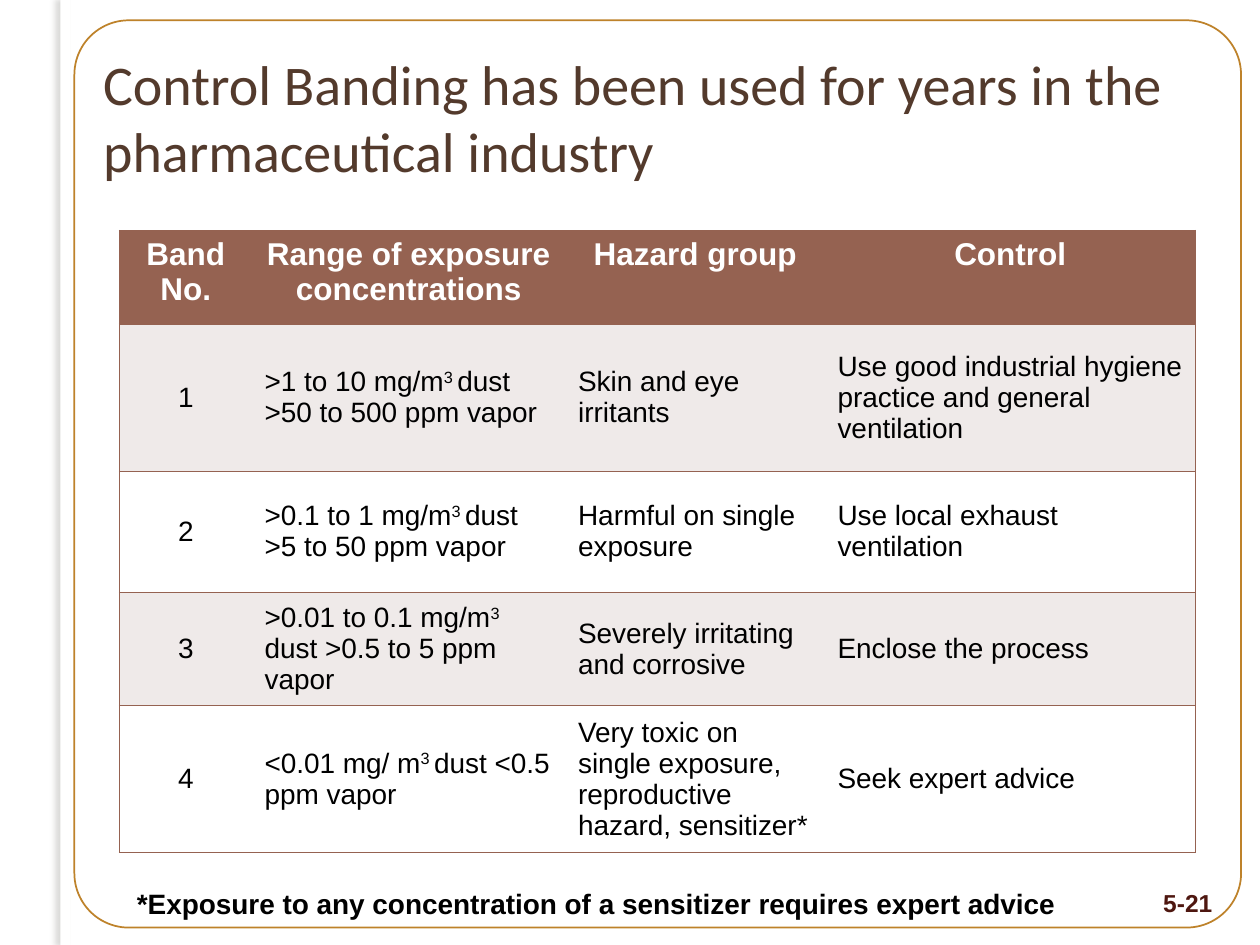
import pptx
import pptx.util
import pptx.dml.color
import pptx.enum.shapes
import pptx.enum.text
import pptx.oxml
from pptx.oxml.ns import nsdecls

Cm = pptx.util.Cm
Pt = pptx.util.Pt
ALIGN = pptx.enum.text.PP_ALIGN
ANCHOR = pptx.enum.text.MSO_ANCHOR
SHAPE = pptx.enum.shapes.MSO_SHAPE

TITLE = "Control Banding has been used for years in the pharmaceutical industry"
FOOTNOTE = "*Exposure to any concentration of a sensitizer requires expert advice"
PAGE = "5-21"
HEADER = ["Band No.", "Range of exposure concentrations", "Hazard group", "Control"]
BANDS = [
    ("1", (">1 to 10 mg/m", "dust >50 to 500 ppm vapor"), "Skin and eye irritants",
     "Use good industrial hygiene practice and general ventilation"),
    ("2", (">0.1 to 1 mg/m", "dust >5 to 50 ppm vapor"), "Harmful on single exposure",
     "Use local exhaust ventilation"),
    ("3", (">0.01 to 0.1 mg/m", "dust >0.5 to 5 ppm vapor"),
     "Severely irritating and corrosive", "Enclose the process"),
    ("4", ("<0.01 mg/ m", "dust <0.5 ppm vapor"),
     "Very toxic on single exposure, reproductive hazard, sensitizer*",
     "Seek expert advice"),
]
COL_WIDTHS = [2.67, 6.32, 5.23, 7.47]
ROW_HEIGHTS = [1.88, 2.97, 2.44, 2.24, 2.87]
BROWN = "956251"
STRIPES = ["FFFFFF", "EFEAE9"]


def rgb(value):
    return pptx.dml.color.RGBColor.from_string(value)


def write(tf, text, size=16, font="Arial", color="000000", bold=False,
          align=ALIGN.LEFT, anchor=ANCHOR.TOP):
    tf.word_wrap = True
    tf.vertical_anchor = anchor
    p = tf.paragraphs[0]
    p.alignment = align
    parts = [(text, 0)]
    if isinstance(text, tuple):
        parts = [(text[0], 0), ("3 ", 30000), (text[1], 0)]
    for part, baseline in parts:
        r = p.add_run()
        r.text = part
        r.font.size = Pt(size)
        r.font.name = font
        r.font.bold = bold
        r.font.color.rgb = rgb(color)
        if baseline:
            r.font._element.set("baseline", str(baseline))


def add_text(s, box, text, **style):
    sp = s.shapes.add_textbox(*[Cm(v) for v in box])
    write(sp.text_frame, text, **style)


def add_panel(s, kind, box):
    sp = s.shapes.add_shape(kind, *[Cm(v) for v in box])
    sp.shadow.inherit = False
    return sp


def add_borders(cell, sides):
    tcPr = cell._tc.get_or_add_tcPr()
    for side in "LRTB":
        paint = "<a:noFill/>"
        if side in sides:
            paint = f'<a:solidFill><a:srgbClr val="{BROWN}"/></a:solidFill>'
        tcPr.append(pptx.oxml.parse_xml(
            f'<a:ln{side} {nsdecls("a")} w="12700">{paint}</a:ln{side}>'))


def add_bands_table(s):
    rows = [HEADER] + BANDS
    frame = s.shapes.add_table(len(rows), len(HEADER), Cm(2.41), Cm(4.65),
                               Cm(sum(COL_WIDTHS)), Cm(sum(ROW_HEIGHTS)))
    table = frame.table
    table.horz_banding = False
    for column, width in zip(table.columns, COL_WIDTHS):
        column.width = Cm(width)
    for i, row in enumerate(rows):
        table.rows[i].height = Cm(ROW_HEIGHTS[i])
        for j, text in enumerate(row):
            cell = table.cell(i, j)
            add_borders(cell, "TB" + {0: "L", len(row) - 1: "R"}.get(j, ""))
            cell.fill.solid()
            cell.fill.fore_color.rgb = rgb(STRIPES[i % 2] if i else BROWN)
            if i == 0:
                write(cell.text_frame, text, size=18, color="FFFFFF", bold=True,
                      align=ALIGN.CENTER)
            else:
                write(cell.text_frame, text,
                      align=ALIGN.LEFT if j else ALIGN.CENTER)
            cell.vertical_anchor = ANCHOR.MIDDLE if i else ANCHOR.TOP


def main():
    prs = pptx.Presentation()
    prs.slide_width, prs.slide_height = Cm(25.4), Cm(19.05)
    s = prs.slides.add_slide(prs.slide_layouts[6])

    strip = add_panel(s, SHAPE.RECTANGLE, (1.22, 0, 0.2, 19.05))
    strip.fill.solid()
    strip.fill.fore_color.rgb = rgb("FFFFFF")
    strip.line.fill.background()
    effects = strip._element.spPr.find(pptx.oxml.ns.qn("a:effectLst"))
    effects.append(pptx.oxml.parse_xml(
        f'<a:outerShdw {nsdecls("a")} blurRad="38100" dist="38100" dir="10800000" '
        'algn="tl" rotWithShape="0"><a:srgbClr val="74726D">'
        '<a:alpha val="25000"/></a:srgbClr></a:outerShdw>'))

    border = add_panel(s, SHAPE.ROUNDED_RECTANGLE, (1.5, 0.41, 23.52, 18.29))
    border.adjustments[0] = 0.06
    border.fill.background()
    border.line.width = Pt(1)
    border.line.color.rgb = rgb("B77513")
    color = border.line.fill._xPr.find(".//" + pptx.oxml.ns.qn("a:srgbClr"))
    color.append(pptx.oxml.parse_xml(f'<a:alpha {nsdecls("a")} val="90000"/>'))

    add_text(s, (22.91, 17.78, 1.78, 0.74), PAGE, size=14, color="4E1710",
             bold=True, align=ALIGN.RIGHT)
    add_text(s, (1.83, 0.76, 22.99, 3.18), TITLE, size=32, font="Calibri",
             color="533A2C", anchor=ANCHOR.MIDDLE)
    add_bands_table(s)
    add_text(s, (2.51, 17.75, 20.32, 0.94), FOOTNOTE, bold=True)

    prs.save("out.pptx")


if __name__ == "__main__":
    main()
